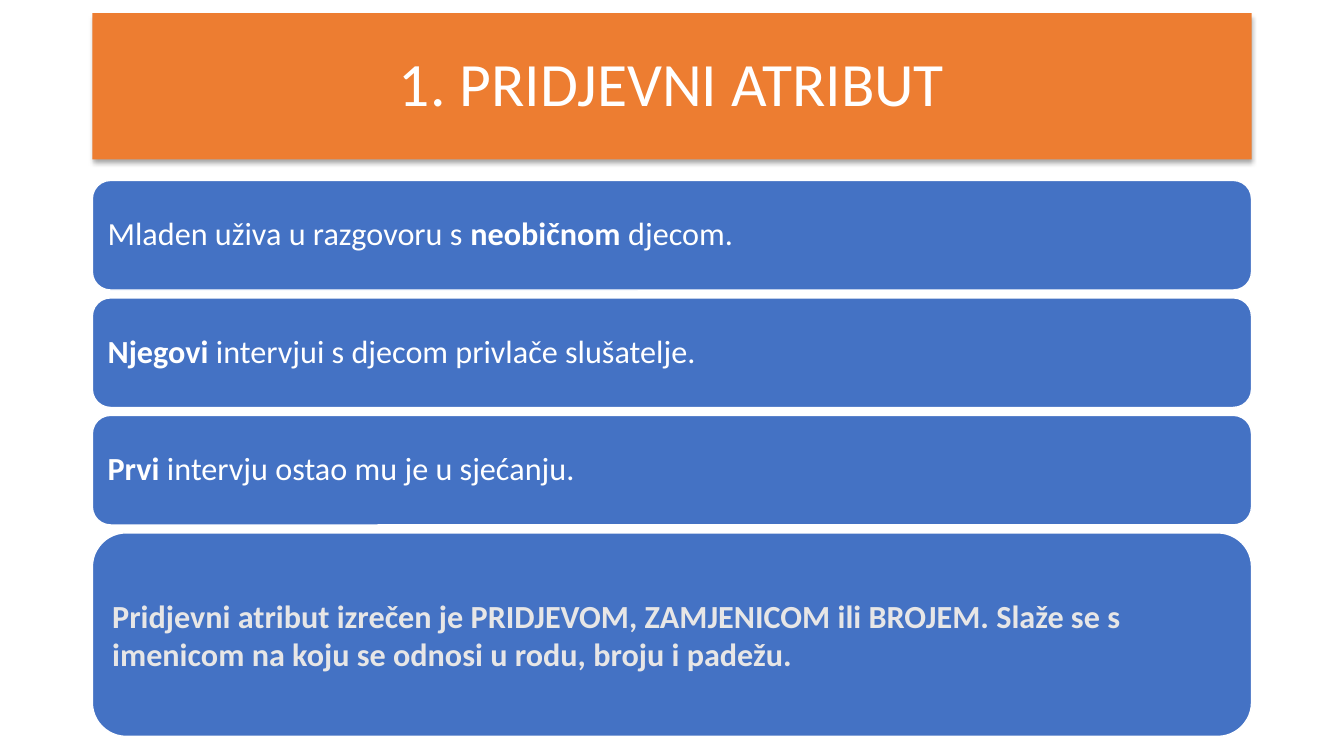
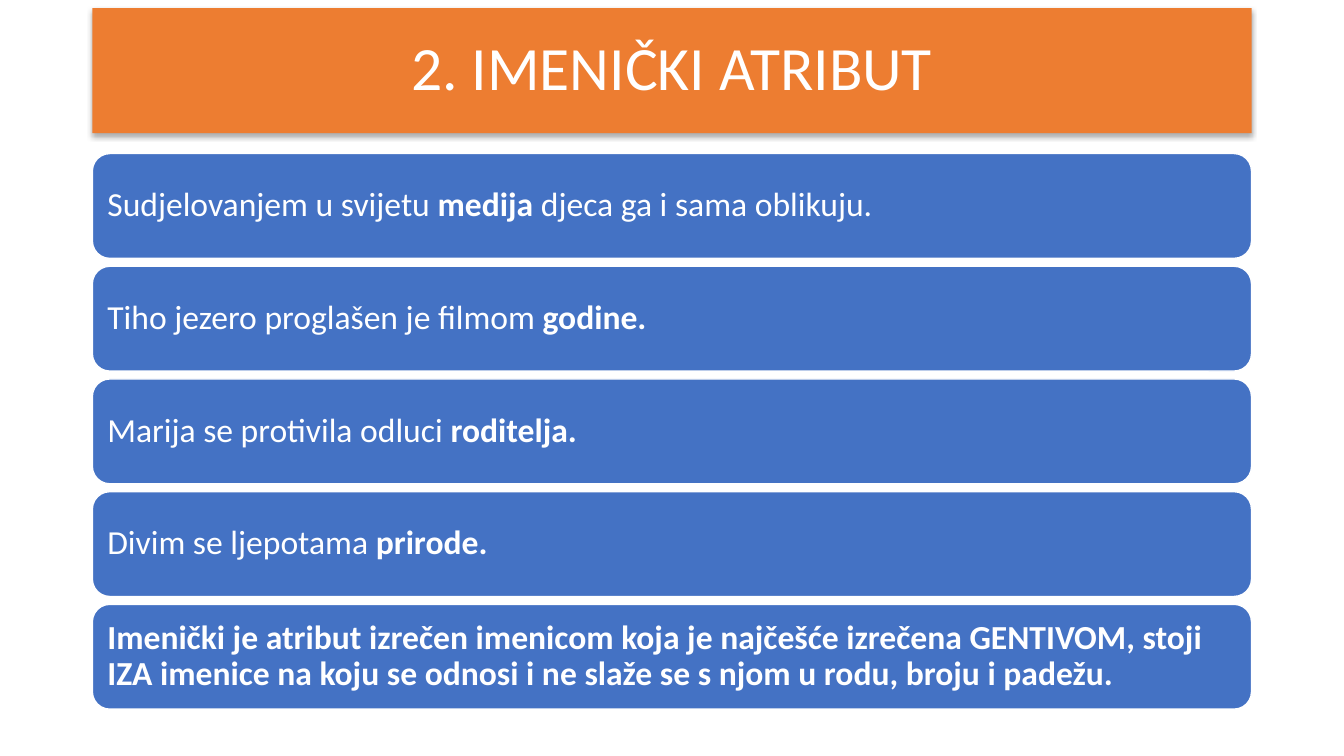
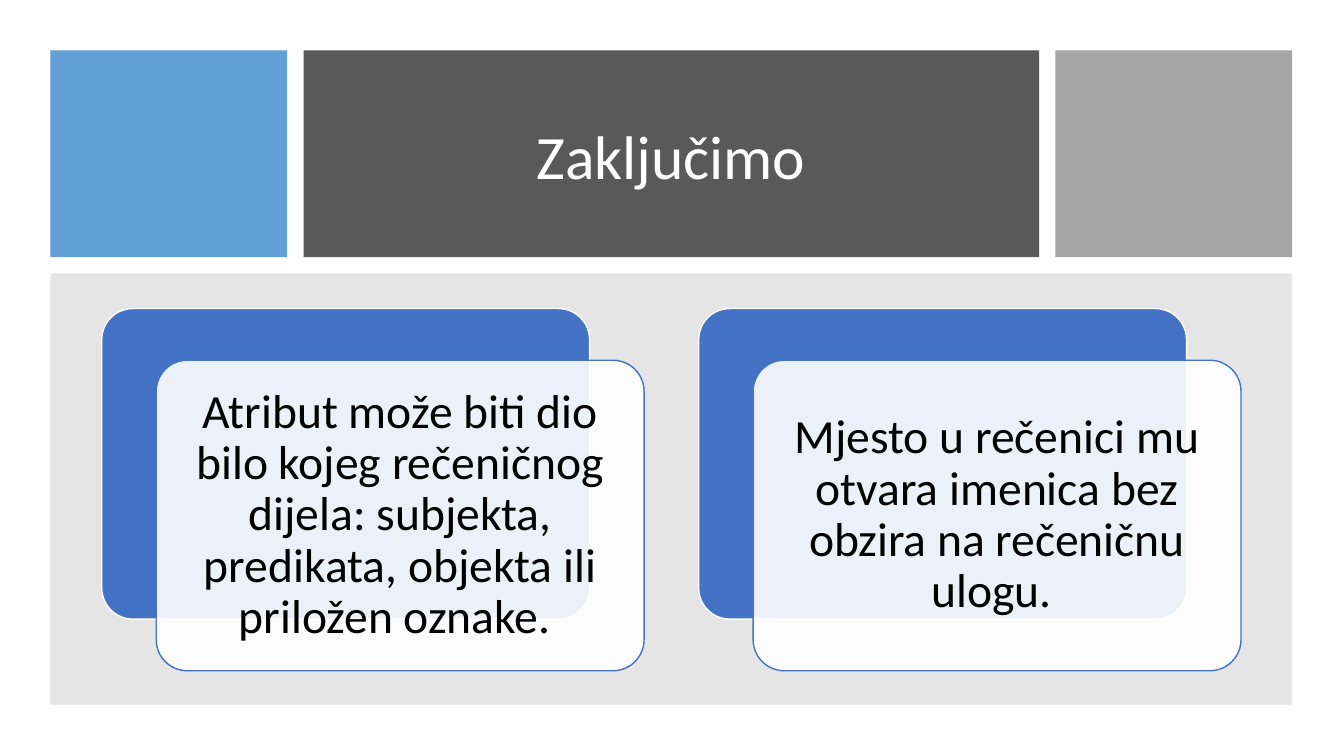
from lxml.etree import SubElement
from pptx import Presentation
from pptx.dml.color import RGBColor
from pptx.enum.shapes import MSO_SHAPE
from pptx.enum.text import MSO_ANCHOR, MSO_AUTO_SIZE, PP_ALIGN
from pptx.oxml import parse_xml
from pptx.oxml.ns import nsdecls, qn
from pptx.util import Pt

FONT = "Calibri"
WHITE, BLACK, LIGHT = "FFFFFF", "000000", "E7E6E6"
ORANGE, BLUE, SKY = "ED7D31", "4472C4", "5B9BD5"
DARK, SILVER, GREY = "595959", "A5A5A5", "808080"
BOLD_MARK = "**"

CONTENT_LEFT, CONTENT_WIDTH = 66, 828
CARD_GAP = 5.6

SHADOW = f"""<a:effectLst {nsdecls("a")}>
  <a:outerShdw blurRad="{Pt(3.5)}" dist="{Pt(2.2)}" dir="5400000" algn="ctr" rotWithShape="0">
    <a:srgbClr val="{BLACK}"><a:alpha val="32000"/></a:srgbClr>
  </a:outerShdw>
</a:effectLst>"""


def color(hex_text):
    return RGBColor.from_string(hex_text)


def set_fill(shape, hex_text, opacity=100):
    shape.fill.solid()
    shape.fill.fore_color.rgb = color(hex_text)
    if opacity < 100:
        fill_color = shape.fill._xPr.find(qn("a:solidFill"))[0]
        SubElement(fill_color, qn("a:alpha")).set("val", str(opacity * 1000))


def add_box(slide, preset, box, fill, opacity=100, line=None):
    """Add a preset shape; box is left, top, width, height in points."""
    shape = slide.shapes.add_shape(preset, *map(Pt, box))
    shape.shadow.inherit = False
    set_fill(shape, fill, opacity)
    if line:
        shape.line.color.rgb = color(line)
        shape.line.width = Pt(1)
    else:
        shape.line.fill.background()
    return shape


def set_text(shape, text, size, text_color, align, inset=7.2, spacing=0.9):
    """Write one paragraph; parts between bold marks are bold."""
    frame = shape.text_frame
    frame.word_wrap = True
    frame.auto_size = MSO_AUTO_SIZE.NONE
    frame.vertical_anchor = MSO_ANCHOR.MIDDLE
    frame.margin_left = frame.margin_right = Pt(inset)
    frame.margin_top = frame.margin_bottom = Pt(inset)
    paragraph = frame.paragraphs[0]
    paragraph.alignment = align
    paragraph.line_spacing = spacing
    for index, part in enumerate(text.split(BOLD_MARK)):
        if not part:
            continue
        run = paragraph.add_run()
        run.text = part
        run.font.name = FONT
        run.font.size = Pt(size)
        run.font.bold = index % 2 == 1
        run.font.color.rgb = color(text_color)


def place_title(slide, text, box, fill):
    """Turn the title placeholder into a filled band."""
    title = slide.shapes.title
    title.left, title.top, title.width, title.height = map(Pt, box)
    set_fill(title, fill)
    set_text(title, text, 44, WHITE, PP_ALIGN.CENTER)
    return title


def add_card(slide, box, text, size, text_color=WHITE, spacing=0.9):
    card = add_box(slide, MSO_SHAPE.ROUNDED_RECTANGLE, box, BLUE, line=WHITE)
    set_text(card, text, size, text_color, PP_ALIGN.LEFT, spacing=spacing)


def add_attribute_slide(presentation, title, title_top, title_height, examples,
                        cards_top, card_height, size, definition,
                        definition_height, definition_style):
    """Orange title, a stack of examples and a closing definition."""
    slide = presentation.slides.add_slide(presentation.slide_layouts[5])
    band = place_title(slide, title, (CONTENT_LEFT, title_top, CONTENT_WIDTH, title_height), ORANGE)
    band._element.spPr.append(parse_xml(SHADOW))

    top = cards_top
    for example in examples:
        add_card(slide, (CONTENT_LEFT, top, CONTENT_WIDTH, card_height), example, size)
        top += card_height + CARD_GAP
    add_card(slide, (CONTENT_LEFT, top, CONTENT_WIDTH, definition_height),
             BOLD_MARK + definition + BOLD_MARK, size, **definition_style)


def add_layered_card(slide, left, top, text):
    """A blue card with a translucent text card shifted over it."""
    width, height, shift_x, shift_y = 348.5, 221.8, 38.9, 36.9
    back = add_box(slide, MSO_SHAPE.ROUNDED_RECTANGLE,
                   (left, top, width, height), BLUE, line=WHITE)
    front = add_box(slide, MSO_SHAPE.ROUNDED_RECTANGLE,
                    (left + shift_x, top + shift_y, width, height), WHITE, 90, BLUE)
    for card in (back, front):
        card.adjustments[0] = 0.1
    set_text(front, text, 34, BLACK, PP_ALIGN.CENTER, inset=10.2)


def add_conclusion_slide(presentation, title, conclusions, box):
    """Three header tiles above a panel of layered cards."""
    slide = presentation.slides.add_slide(presentation.slide_layouts[5])
    left, top, width, height = box
    side_width, header_height, gap = 169.2, 147.6, 11.6

    # Header tiles
    title_width = width - 2 * (side_width + gap)
    add_box(slide, MSO_SHAPE.RECTANGLE, (left, top, side_width, header_height), SKY, 95)
    band = place_title(slide, title,
                       (left + side_width + gap, top, title_width, header_height), DARK)
    band.text_frame.margin_top = Pt(15)
    add_box(slide, MSO_SHAPE.RECTANGLE,
            (left + width - side_width, top, side_width, header_height), SILVER)

    # Panel and cards
    panel_top = top + header_height + gap
    add_box(slide, MSO_SHAPE.RECTANGLE,
            (left, panel_top, width, height - header_height - gap), GREY, 20)
    for index, text in enumerate(conclusions):
        add_layered_card(slide, left + 36.7 + index * 426.4, panel_top + 25.2, text)


def main():
    presentation = Presentation()
    presentation.slide_width, presentation.slide_height = Pt(960), Pt(540)

    add_attribute_slide(
        presentation, "1. PRIDJEVNI ATRIBUT", 9.4, 104.4,
        ["Mladen uživa u razgovoru s **neobičnom** djecom.",
         "**Njegovi** intervjui s djecom privlače slušatelje.",
         "**Prvi **intervju ostao mu je u sjećanju."],
        128.9, 78.3, 23,
        "Pridjevni atribut izrečen je PRIDJEVOM, ZAMJENICOM ili BROJEM. "
        "Slaže se s imenicom na koju se odnosi u rodu, broju i padežu.",
        145.4, {"text_color": LIGHT, "spacing": 1.0})

    add_attribute_slide(
        presentation, "2. IMENIČKI ATRIBUT", 5.8, 89.3,
        ["Sudjelovanjem u svijetu **medija** djeca ga i sama oblikuju.",
         "Tiho jezero proglašen je filmom **godine.**",
         "Marija se protivila odluci **roditelja.**",
         "Divim se ljepotama **prirode.**"],
        109.7, 74.9, 24,
        "Imenički je atribut izrečen imenicom koja je najčešće izrečena GENTIVOM, "
        "stoji IZA imenice na koju se odnosi i ne slaže se s njom u rodu, broju i padežu.",
        74.9, {})

    add_conclusion_slide(
        presentation, "Zaključimo",
        ["Atribut može biti dio bilo kojeg rečeničnog dijela: subjekta, "
         "predikata, objekta ili priložen oznake. ",
         "Mjesto u rečenici mu otvara imenica bez obzira na rečeničnu ulogu. "],
        (36, 36, 887, 467.4))

    presentation.save("out.pptx")


if __name__ == "__main__":
    main()
